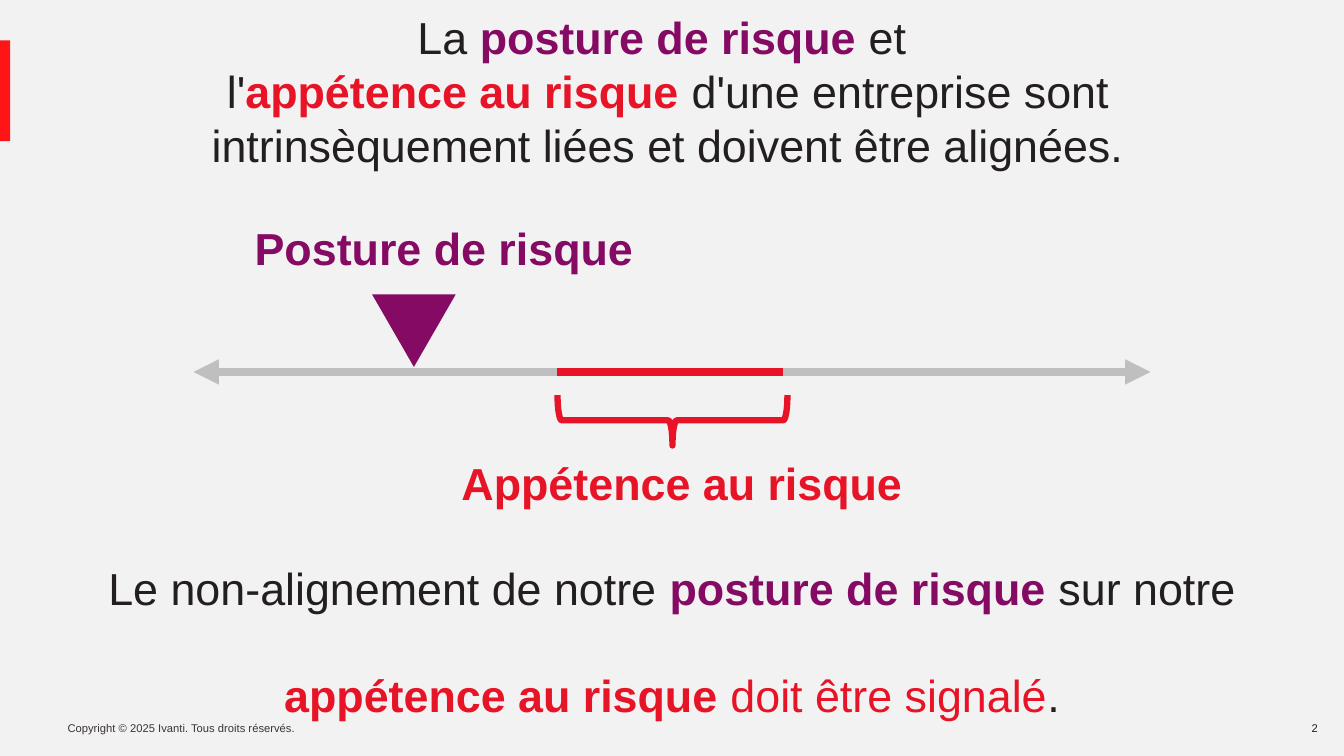
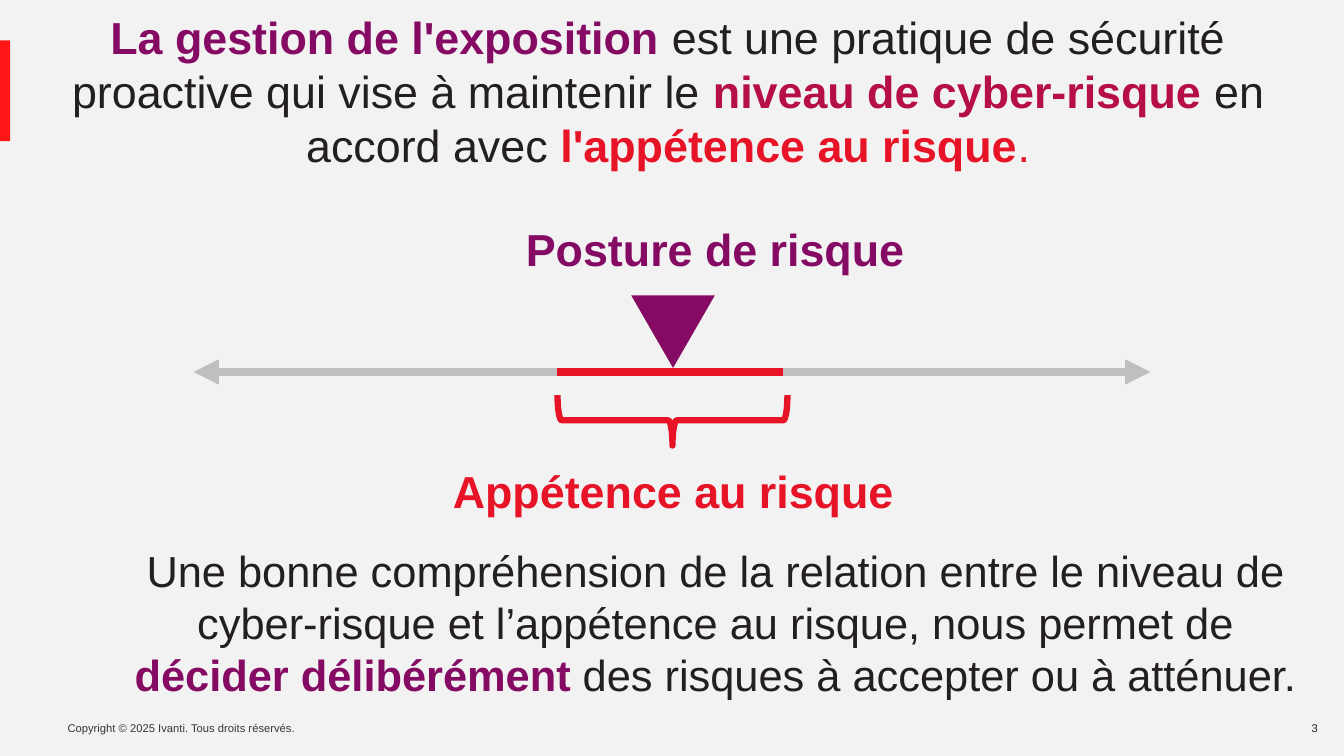
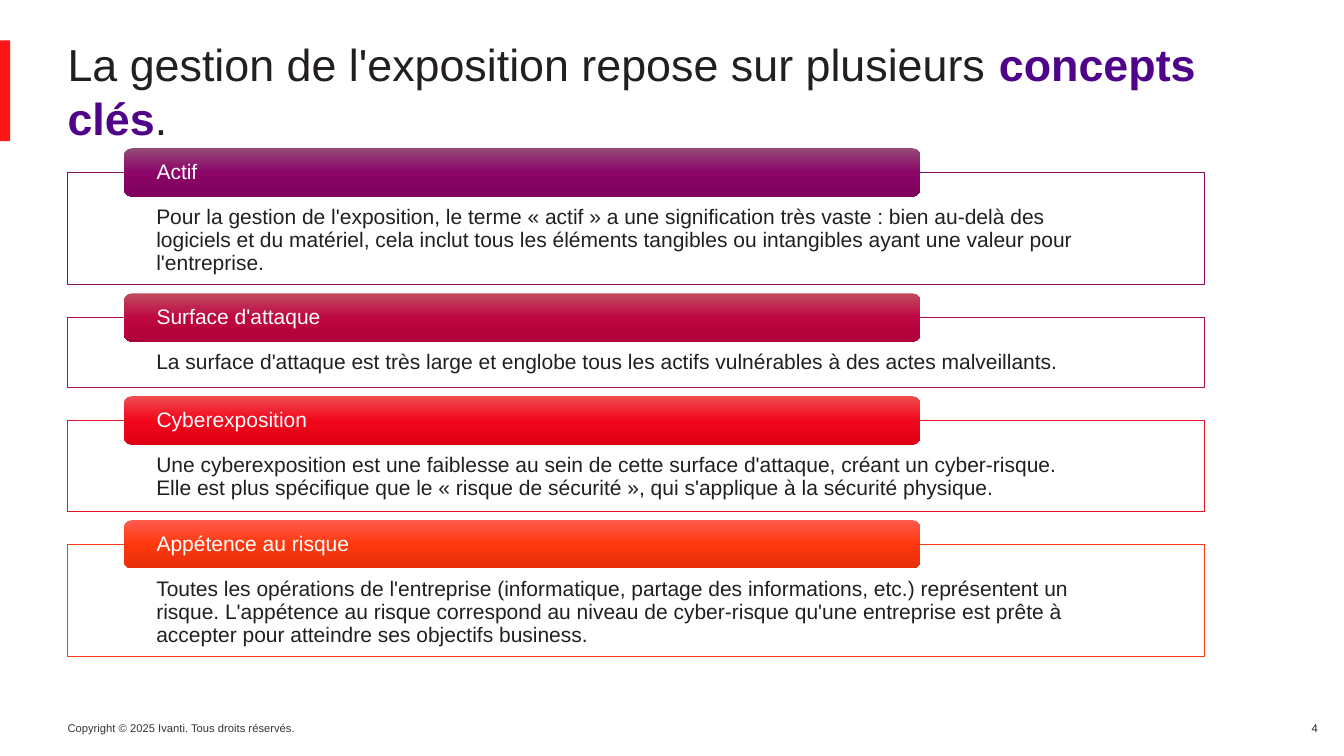
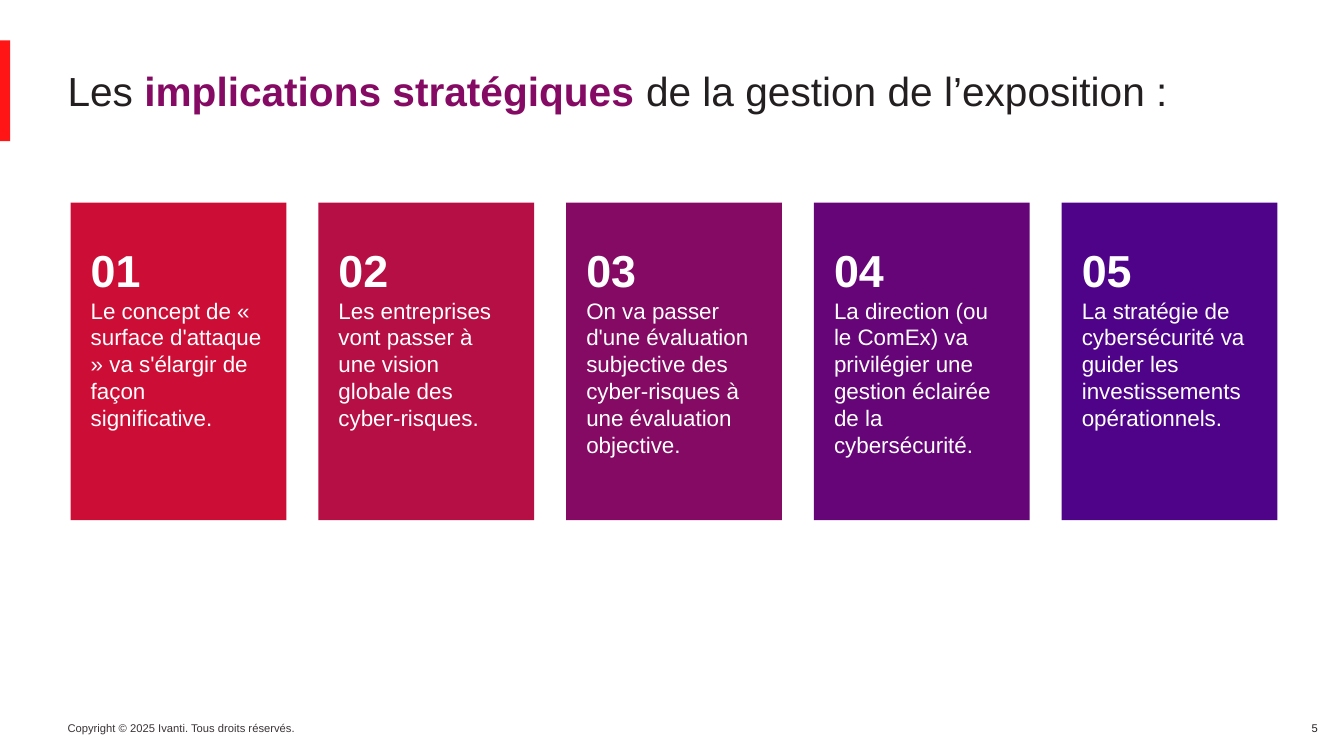
import copy
from dataclasses import dataclass

import pptx
import pptx.dml.color
import pptx.enum.shapes
import pptx.enum.text
import pptx.oxml.ns
import pptx.util
from lxml import etree
from pptx.util import Inches

SHAPES = pptx.enum.shapes.MSO_SHAPE
ANCHOR = pptx.enum.text.MSO_ANCHOR
ALIGN = pptx.enum.text.PP_ALIGN


# Theme
@dataclass(frozen=True)
class Theme:
    font: str = "Arial"
    ink: str = "231F20"
    footer: str = "3B3436"
    white: str = "FFFFFF"
    mist: str = "F2F2F2"
    grey: str = "BFBFBF"
    band: str = "FF1515"
    purple: str = "850A64"
    raspberry: str = "B60F45"
    red: str = "E71326"
    orange: str = "FF380F"
    crimson: str = "CC0E36"
    violet: str = "660578"
    indigo: str = "4E0389"
    large: int = 32
    statement: int = 31
    heading: int = 29
    card: int = 16
    body: int = 15
    small: int = 8


THEME = Theme()


def plain(text, color=THEME.ink):
    return text, color, False


def strong(text, color):
    return text, color, True


# Content
COPYRIGHT = "Copyright © 2025 Ivanti. Tous droits réservés."
FIRST_PAGE = 2

SCALE_SLIDES = [
    {
        "title": [
            plain("La "), strong("posture de risque", THEME.purple), plain(" et \nl'"),
            strong("appétence au risque", THEME.red),
            plain(" d'une entreprise sont intrinsèquement liées et doivent être alignées."),
        ],
        "marker": (3.69, 2.92),
        "posture_box": (2.33, 2.14, 4.15, 0.64),
        "appetite_box": (4.26, 4.47, 5.01, 0.64),
        "statement_box": (0.93, 5.51, 11.47, 1.18),
        "statement_size": THEME.large,
        "statement_gap": 38.5,
        "statement": [
            [plain("Le non-alignement de notre "), strong("posture de risque", THEME.purple),
             plain(" sur notre")],
            [strong("appétence au risque", THEME.red), plain(" doit être signalé", THEME.red),
             plain(".")],
        ],
    },
    {
        "title": [
            strong("La gestion de l'exposition", THEME.purple),
            plain(" est une pratique de sécurité proactive qui vise à maintenir le "),
            strong("niveau de cyber-risque ", THEME.raspberry), plain("en accord avec"),
            strong(" l'appétence au risque", THEME.red), plain(".", THEME.red),
        ],
        "marker": (6.26, 2.93),
        "posture_box": (4.91, 2.15, 4.37, 0.64),
        "appetite_box": (4.35, 4.55, 4.66, 0.64),
        "statement_box": (1.21, 5.35, 11.77, 1.67),
        "statement_size": THEME.statement,
        "statement_gap": 0,
        "statement": [
            [plain("Une bonne compréhension de la relation entre le niveau de cyber-risque "
                   "et l’appétence au risque, nous permet de "),
             strong("décider délibérément ", THEME.purple),
             plain("des risques à accepter ou à atténuer.")],
        ],
    },
]

CONCEPTS_TITLE = [
    plain("La gestion de l'exposition repose sur plusieurs "),
    strong("concepts clés", THEME.indigo), plain("."),
]
# Name, description, frame height, frame colour, gradient from top to bottom
CONCEPTS = [
    ("Actif",
     "Pour la gestion de l'exposition, le terme « actif » a une signification très vaste : "
     "bien au-delà des logiciels et du matériel, cela inclut tous les éléments tangibles ou "
     "intangibles ayant une valeur pour l'entreprise.",
     1.11, THEME.purple, ("944B78", "8B0467", "7F005D")),
    ("Surface d'attaque",
     "La surface d'attaque est très large et englobe tous les actifs vulnérables à des actes "
     "malveillants.",
     0.69, THEME.raspberry, ("C14C61", "BE0742", "AF0039")),
    ("Cyberexposition",
     "Une cyberexposition est une faiblesse au sein de cette surface d'attaque, créant un "
     "cyber-risque.\nElle est plus spécifique que le « risque de sécurité », qui s'applique "
     "à la sécurité physique.",
     0.9, THEME.red, ("F04C50", "F2081D", "DE0014")),
    ("Appétence au risque",
     "Toutes les opérations de l'entreprise (informatique, partage des informations, etc.) "
     "représentent un risque. L'appétence au risque correspond au niveau de cyber-risque "
     "qu'une entreprise est prête à accepter pour atteindre ses objectifs business.",
     1.11, THEME.orange, ("FF5B4D", "FF380F", "E5300B")),
]

IMPLICATIONS_TITLE = [
    plain("Les "), strong("implications stratégiques ", THEME.purple),
    plain("de la gestion de l’exposition :"),
]
IMPLICATIONS = [
    ("Le concept de « surface d'attaque » va s'élargir de façon significative.", THEME.crimson),
    ("Les entreprises vont passer à une vision globale des cyber-risques.", THEME.raspberry),
    ("On va passer d'une évaluation subjective des cyber-risques à une évaluation objective.",
     THEME.purple),
    ("La direction (ou le ComEx) va privilégier une gestion éclairée de la cybersécurité.",
     THEME.violet),
    ("La stratégie de cybersécurité va guider les investissements opérationnels.", THEME.indigo),
]


# Drawing helpers
def rgb(color):
    return pptx.dml.color.RGBColor.from_string(color)


def write(shape, paragraphs, sizes, align=ALIGN.LEFT, anchor=ANCHOR.TOP,
          insets=(0.1, 0.05, 0.1, 0.05), line_spacing=None, gap=0):
    """Fill a shape with paragraphs of (text, color, bold) runs, one size per paragraph."""
    frame = shape.text_frame
    frame.word_wrap = True
    frame.vertical_anchor = anchor
    (frame.margin_left, frame.margin_top,
     frame.margin_right, frame.margin_bottom) = map(Inches, insets)
    for index, (runs, size) in enumerate(zip(paragraphs, sizes)):
        paragraph = frame.add_paragraph() if index else frame.paragraphs[0]
        paragraph.alignment = align
        if line_spacing:
            paragraph.line_spacing = line_spacing
        if index and gap:
            paragraph.space_before = pptx.util.Pt(gap)
        for text, color, bold in runs:
            for line_number, line in enumerate(text.split("\n")):
                if line_number:
                    paragraph.add_line_break()
                run = paragraph.add_run()
                run.text = line
                run.font.name = THEME.font
                run.font.size = pptx.util.Pt(size)
                run.font.bold = bold
                run.font.color.rgb = rgb(color)


def add_text(slide, box, paragraphs, size, **layout):
    shape = slide.shapes.add_textbox(*map(Inches, box))
    write(shape, paragraphs, [size] * len(paragraphs), **layout)


def add_shape(slide, kind, box, fill=None, line=None, width=0.5, rotation=0):
    shape = slide.shapes.add_shape(kind, *map(Inches, box))
    shape.shadow.inherit = False
    shape.rotation = rotation
    if fill:
        shape.fill.solid()
        shape.fill.fore_color.rgb = rgb(fill)
    else:
        shape.fill.background()
    if line:
        shape.line.color.rgb = rgb(line)
        shape.line.width = pptx.util.Pt(width)
    else:
        shape.line.fill.background()
    return shape


def fill_gradient(shape, colors):
    shape.fill.gradient()
    shape.fill.gradient_angle = 270
    stop_list = shape.element.spPr.find(".//" + pptx.oxml.ns.qn("a:gsLst"))
    stop_list.append(copy.deepcopy(stop_list[-1]))
    for index, (stop, color) in enumerate(zip(shape.fill.gradient_stops, colors)):
        stop.position = index / (len(colors) - 1)
        stop.color.rgb = rgb(color)


def add_line(slide, start, end, y, color, width, arrows=False):
    line = slide.shapes.add_connector(
        pptx.enum.shapes.MSO_CONNECTOR.STRAIGHT, Inches(start), Inches(y), Inches(end), Inches(y))
    line.line.color.rgb = rgb(color)
    line.line.width = pptx.util.Pt(width)
    properties = line.element.spPr
    if arrows:
        outline = properties.find(pptx.oxml.ns.qn("a:ln"))
        for tag in ("a:headEnd", "a:tailEnd"):
            etree.SubElement(outline, pptx.oxml.ns.qn(tag), type="triangle")
    etree.SubElement(properties, pptx.oxml.ns.qn("a:effectLst"))


def add_base(presentation, background, title, title_width=12.01, title_size=THEME.large,
             align=ALIGN.LEFT):
    """Start a slide with its background, footer, side band and title."""
    slide = presentation.slides.add_slide(presentation.slide_layouts[6])
    slide.background.fill.solid()
    slide.background.fill.fore_color.rgb = rgb(background)
    page = FIRST_PAGE + len(presentation.slides) - 1
    footer_insets = (0, 0.05, 0.1, 0.05)
    add_text(slide, (0.67, 7.11, 2.4, 0.24), [[plain(COPYRIGHT, THEME.footer)]], THEME.small,
             insets=footer_insets)
    add_shape(slide, SHAPES.RECTANGLE, (0, 0.4, 0.1, 1), THEME.band)
    add_text(slide, (12.69, 7.11, 0.48, 0.24), [[plain(str(page))]], THEME.small,
             align=ALIGN.RIGHT, insets=footer_insets)
    add_text(slide, (0.67, 0.59, title_width, 0.62), [title], title_size,
             align=align, anchor=ANCHOR.MIDDLE, insets=(0, 0, 0.1, 0))
    return slide


# Slides
def build_scale(presentation, content):
    slide = add_base(presentation, THEME.mist, content["title"], align=ALIGN.CENTER)
    axis_y = 3.69
    add_line(slide, 1.92, 11.41, axis_y, THEME.grey, 6, arrows=True)
    add_shape(slide, SHAPES.LEFT_BRACE, (6.42, 3.03, 0.5, 2.28), line=THEME.red, width=4.5,
              rotation=270)
    add_line(slide, 5.52, 7.77, axis_y, THEME.red, 6)
    add_shape(slide, SHAPES.ISOSCELES_TRIANGLE, (*content["marker"], 0.83, 0.72), THEME.purple,
              rotation=180)
    for box, label, color in (
        (content["appetite_box"], "Appétence au risque", THEME.red),
        (content["posture_box"], "Posture de risque", THEME.purple),
    ):
        add_text(slide, box, [[strong(label, color)]], THEME.large, align=ALIGN.CENTER)
    add_text(slide, content["statement_box"], content["statement"], content["statement_size"],
             align=ALIGN.CENTER, gap=content["statement_gap"])


def build_concepts(presentation):
    slide = add_base(presentation, THEME.white, CONCEPTS_TITLE, title_width=12.4)
    top, gap, tab_height = 1.71, 0.33, 0.48
    for name, description, height, color, gradient in CONCEPTS:
        frame = add_shape(slide, SHAPES.RECTANGLE, (0.67, top, 11.28, height), THEME.white, color)
        write(frame, [[plain(description)]], [THEME.body], insets=(0.88, 0.34, 0.88, 0.12),
              line_spacing=0.9)
        tab = add_shape(slide, SHAPES.ROUNDED_RECTANGLE,
                        (1.23, top - tab_height / 2, 7.9, tab_height))
        fill_gradient(tab, gradient)
        write(tab, [[plain(name, THEME.white)]], [THEME.body], anchor=ANCHOR.MIDDLE,
              insets=(0.3, 0, 0.3, 0), line_spacing=0.9)
        top += height + gap


def build_implications(presentation):
    slide = add_base(presentation, THEME.white, IMPLICATIONS_TITLE, title_width=12.66,
                     title_size=THEME.heading)
    first_left, last_left = 0.7, 10.53
    pitch = (last_left - first_left) / (len(IMPLICATIONS) - 1)
    for index, (text, color) in enumerate(IMPLICATIONS):
        card = add_shape(slide, SHAPES.RECTANGLE,
                         (first_left + index * pitch, 2.01, 2.14, 3.15), color)
        write(card, [[strong(f"{index + 1:02}", THEME.white)], [plain(text, THEME.white)]],
              [THEME.large, THEME.card], insets=(0.2, 0.4, 0.2, 0.1))


def main():
    presentation = pptx.Presentation()
    presentation.slide_width = Inches(13.33)
    presentation.slide_height = Inches(7.5)
    for content in SCALE_SLIDES:
        build_scale(presentation, content)
    build_concepts(presentation)
    build_implications(presentation)
    presentation.save("out.pptx")


if __name__ == "__main__":
    main()
